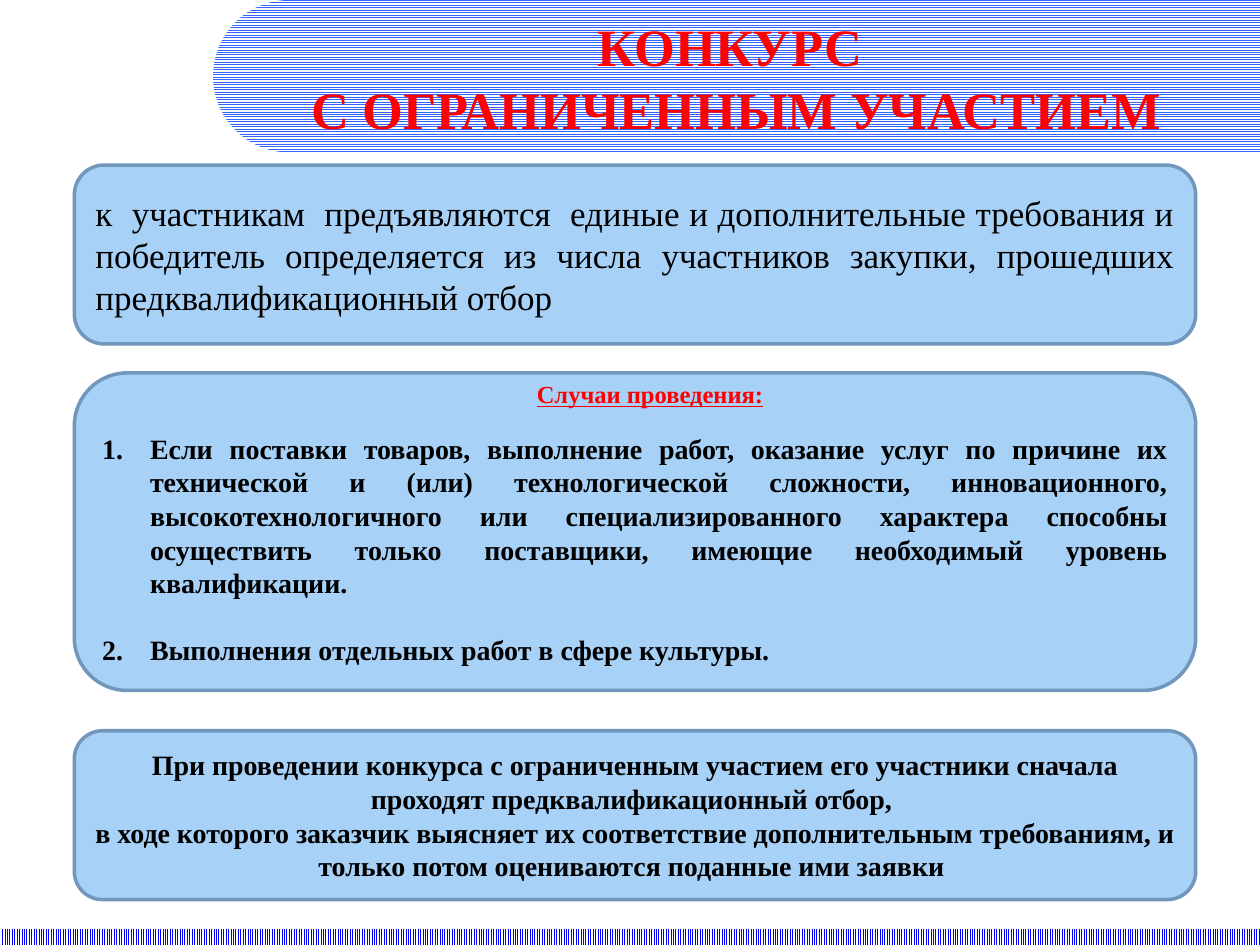
from math import cos, pi, sin

from lxml import etree
from pptx import Presentation
from pptx.dml.color import RGBColor
from pptx.enum.dml import MSO_PATTERN
from pptx.enum.shapes import MSO_SHAPE
from pptx.enum.text import MSO_ANCHOR, PP_ALIGN
from pptx.oxml.ns import qn
from pptx.util import Inches, Pt

RECT, ROUND = MSO_SHAPE.RECTANGLE, MSO_SHAPE.ROUNDED_RECTANGLE
HORZ, VERT = MSO_PATTERN.NARROW_HORIZONTAL, MSO_PATTERN.NARROW_VERTICAL
MIDDLE, TOP = MSO_ANCHOR.MIDDLE, MSO_ANCHOR.TOP
CENTER, JUSTIFY = PP_ALIGN.CENTER, PP_ALIGN.JUSTIFY

FONT = "Times New Roman"
COLORS = {
    "box": "A7D1F7", "edge": "7197BD", "text": "000000", "accent": "FF0000",
    "band": "3366FF", "strip": "0000FF", "back": "FFFFFF",
}
WIDTH, HEIGHT = 10, 7.5
LEFT, SPAN = 0.59, 8.9
INDENT = 0.38


def color(name):
    return RGBColor.from_string(COLORS[name])


def hatch(shape, pattern, name):
    """Fill a borderless shape with a two-colour pattern."""
    shape.shadow.inherit = False
    shape.line.fill.background()
    shape.fill.patterned()
    shape.fill.pattern = pattern
    shape.fill.fore_color.rgb = color(name)
    shape.fill.back_color.rgb = color("back")


def add_band(slide, left, height):
    """Draw the header band with a half-round left end."""
    rad, steps = height / 2, 48
    arc = [(left + rad - rad * sin(pi * i / steps), rad + rad * cos(pi * i / steps))
           for i in range(steps + 1)]
    pen = slide.shapes.build_freeform(Inches(WIDTH), Inches(height), scale=1.0)
    pen.add_line_segments([(Inches(x), Inches(y)) for x, y in arc + [(WIDTH, 0)]])
    hatch(pen.convert_to_shape(), HORZ, "band")


def add_strip(slide, height):
    strip = slide.shapes.add_shape(
        RECT, 0, Inches(HEIGHT - height), Inches(WIDTH), Inches(height))
    hatch(strip, VERT, "strip")


def add_box(slide, top, height):
    box = slide.shapes.add_shape(
        ROUND, Inches(LEFT), Inches(top), Inches(SPAN), Inches(height))
    box.shadow.inherit = False
    box.fill.solid()
    box.fill.fore_color.rgb = color("box")
    box.line.color.rgb = color("edge")
    box.line.width = Pt(2)
    return box


def add_label(slide, left, top, width, height):
    return slide.shapes.add_textbox(*map(Inches, (left, top, width, height)))


def number(para):
    """Give a paragraph automatic numbering with a hanging indent."""
    props = para._p.get_or_add_pPr()
    props.set("marL", str(Inches(INDENT)))
    props.set("indent", str(-Inches(INDENT)))
    etree.SubElement(props, qn("a:buFont"), typeface="+mj-lt")
    etree.SubElement(props, qn("a:buAutoNum"), type="arabicPeriod")


def write(shape, paras, size, align=CENTER, name="text", bold=True,
          line=False, anchor=MIDDLE, listed=False, gap=0):
    """Write paragraphs, each given as a list of lines."""
    frame = shape.text_frame
    frame.word_wrap = True
    frame.vertical_anchor = anchor
    for i, lines in enumerate(paras):
        para = frame.add_paragraph() if i else frame.paragraphs[0]
        para.alignment = align
        if i and gap:
            para.space_before = Pt(gap)
        if listed:
            number(para)
        for j, words in enumerate(lines):
            if j:
                para.add_line_break()
            run = para.add_run()
            run.text = words
            font = run.font
            font.name, font.size, font.bold = FONT, Pt(size), bold
            font.underline = line
            font.color.rgb = color(name)


def main():
    deck = Presentation()
    deck.slide_width, deck.slide_height = Inches(WIDTH), Inches(HEIGHT)
    slide = deck.slides.add_slide(deck.slide_layouts[6])

    add_band(slide, 1.69, 1.21)
    add_strip(slide, 0.13)
    title = add_label(slide, 1.69, 0, 8.31, 1.23)
    write(title, [["КОНКУРС ", "С ОГРАНИЧЕННЫМ УЧАСТИЕМ"]], 30, name="accent")

    result = add_box(slide, 5.8, 1.34)
    write(result, [
        ["При проведении конкурса с ограниченным участием его участники "
         "сначала проходят предквалификационный отбор, "],
        ["в ходе которого заказчик выясняет их соответствие дополнительным "
         "требованиям, и только потом оцениваются поданные ими заявки "],
    ], 16)

    rule = add_box(slide, 1.31, 1.42)
    write(rule, [[
        "к  участникам  предъявляются  единые и дополнительные требования и "
        "победитель определяется из числа участников закупки, прошедших "
        "предквалификационный отбор"]], 20, JUSTIFY, bold=False)

    cases = add_box(slide, 2.96, 2.52)
    cases.text_frame.margin_top = Inches(0.32)
    write(cases, [
        ["Если поставки товаров, выполнение работ, оказание услуг по причине "
         "их технической и (или) технологической сложности, инновационного, "
         "высокотехнологичного или специализированного характера способны "
         "осуществить только поставщики, имеющие необходимый уровень "
         "квалификации."],
        ["Выполнения отдельных работ в сфере культуры."],
    ], 16, JUSTIFY, listed=True, gap=19)

    head = add_label(slide, 2.09, 2.96, 6.14, 0.34)
    write(head, [["Случаи проведения:"]], 14, name="accent", line=True, anchor=TOP)

    deck.save("out.pptx")


if __name__ == "__main__":
    main()
